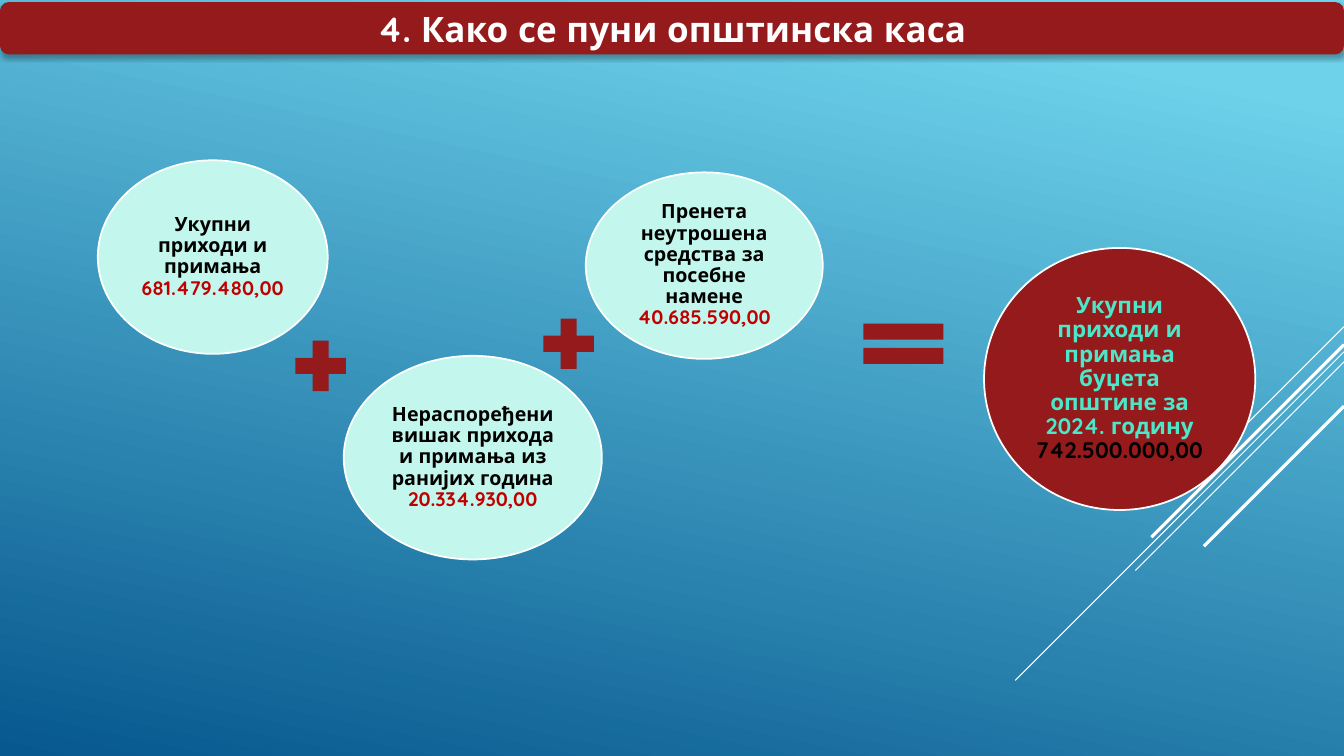
from lxml import etree
from pptx import Presentation
from pptx.dml.color import RGBColor
from pptx.enum.shapes import MSO_CONNECTOR, MSO_SHAPE
from pptx.enum.text import MSO_ANCHOR, PP_ALIGN
from pptx.oxml import parse_xml
from pptx.oxml.ns import qn
from pptx.util import Inches, Pt

OVAL, PLUS, EQUAL = MSO_SHAPE.OVAL, MSO_SHAPE.MATH_PLUS, MSO_SHAPE.MATH_EQUAL
BANNER = MSO_SHAPE.ROUNDED_RECTANGLE
STRAIGHT = MSO_CONNECTOR.STRAIGHT
MIDDLE, CENTER = MSO_ANCHOR.MIDDLE, PP_ALIGN.CENTER

FONT = "Quicksand"
WIDTH, HEIGHT = 13.33, 7.5
COLORS = {name: RGBColor.from_string(value) for name, value in {
    "sky": "6ED2EB", "deep": "06588E", "white": "FFFFFF", "black": "000000",
    "red": "941A1B", "mint": "C3F7ED", "amount": "C00000", "turquoise": "4BE7C8",
}.items()}
BANNER_SHADOW = """
<a:effectLst xmlns:a="http://schemas.openxmlformats.org/drawingml/2006/main">
  <a:outerShdw blurRad="44450" dist="27940" dir="5400000" algn="ctr" rotWithShape="0">
    <a:srgbClr val="000000"><a:alpha val="32000"/></a:srgbClr>
  </a:outerShdw>
</a:effectLst>"""


def add_filled_shape(kind, box, fill, outline=None):
    shape = slide.shapes.add_shape(kind, *map(Inches, box))
    shape.shadow.inherit = False
    shape.fill.solid()
    shape.fill.fore_color.rgb = COLORS[fill]
    if outline:
        shape.line.color.rgb = COLORS[outline]
        shape.line.width = Pt(1.25)
    else:
        shape.line.fill.background()
    return shape


def write_centred(shape, size, runs, spacing=1.0):
    """Fill the shape with one bold paragraph of (text, colour) runs."""
    frame = shape.text_frame
    frame.word_wrap = True
    frame.vertical_anchor = MIDDLE
    for side in ("left", "top", "right", "bottom"):
        setattr(frame, f"margin_{side}", Inches(0.02))
    paragraph = frame.paragraphs[0]
    paragraph.alignment = CENTER
    paragraph.line_spacing = spacing
    for text, color in runs:
        run = paragraph.add_run()
        run.text = text
        for name, value in {"name": FONT, "size": Pt(size), "bold": True}.items():
            setattr(run.font, name, value)
        run.font.color.rgb = COLORS[color]


presentation = Presentation()
presentation.slide_width = Inches(WIDTH)
presentation.slide_height = Inches(HEIGHT)
slide = presentation.slides.add_slide(presentation.slide_layouts[6])

# Background gradient
background = slide.background.fill
background.gradient()
background.gradient_angle = 360 - 102
for stop, position, color in zip(background.gradient_stops, (0.1, 1), ("sky", "deep")):
    stop.position = position
    stop.color.rgb = COLORS[color]

# Diagonal lines falling at 45 degrees from the right edge: top, reach, weight
for top, reach, weight in (
    (3.24, 1.0, 0.75), (3.49, 3.26, 0.75), (3.59, 2.07, 0.75),
    (3.42, 1.91, 2.25), (4.03, 1.39, 2.25),
):
    ends = (WIDTH, top, WIDTH - reach, top + reach)
    line = slide.shapes.add_connector(STRAIGHT, *map(Inches, ends))
    line.line.color.rgb = COLORS["white"]
    line.line.width = Pt(weight)
    etree.SubElement(line._element.spPr, qn("a:effectLst"))

# Title banner
banner = add_filled_shape(BANNER, (0, 0.02, WIDTH, 0.52), "red")
properties = banner._element.spPr
properties.replace(properties.find(qn("a:effectLst")), parse_xml(BANNER_SHADOW))
write_centred(banner, 25, [("4. Како се пуни општинска каса", "white")])

# Operators of the sum
for kind, box in (
    (PLUS, (2.84, 3.29, 0.68, 0.68)),
    (PLUS, (5.3, 3.07, 0.68, 0.68)),
    (EQUAL, (8.42, 3.07, 1.08, 0.68)),
):
    add_filled_shape(kind, box, "red")

# Terms of the sum and its total
for box, fill, size, label, label_color, amount, amount_color in (
    ((0.97, 1.59, 2.28, 1.92), "mint", 14,
     "Укупни приходи и примања ", "black", "681.479.480,00", "amount"),
    ((3.41, 3.53, 2.56, 2.02), "mint", 14,
     "Нераспоређени вишак прихода и примања из ранијих година ", "black",
     "20.334.930,00", "amount"),
    ((5.81, 1.71, 2.35, 1.85), "mint", 14,
     "Пренета неутрошена средства за посебне намене ", "black",
     "40.685.590,00", "amount"),
    ((9.76, 2.46, 2.69, 2.6), "red", 16,
     "Укупни приходи и примања буџета општине за 2024. годину ", "turquoise",
     "742.500.000,00", "black"),
):
    oval = add_filled_shape(OVAL, box, fill, "white")
    write_centred(oval, size, [(label, label_color), (amount, amount_color)], 0.9)

presentation.save("out.pptx")
